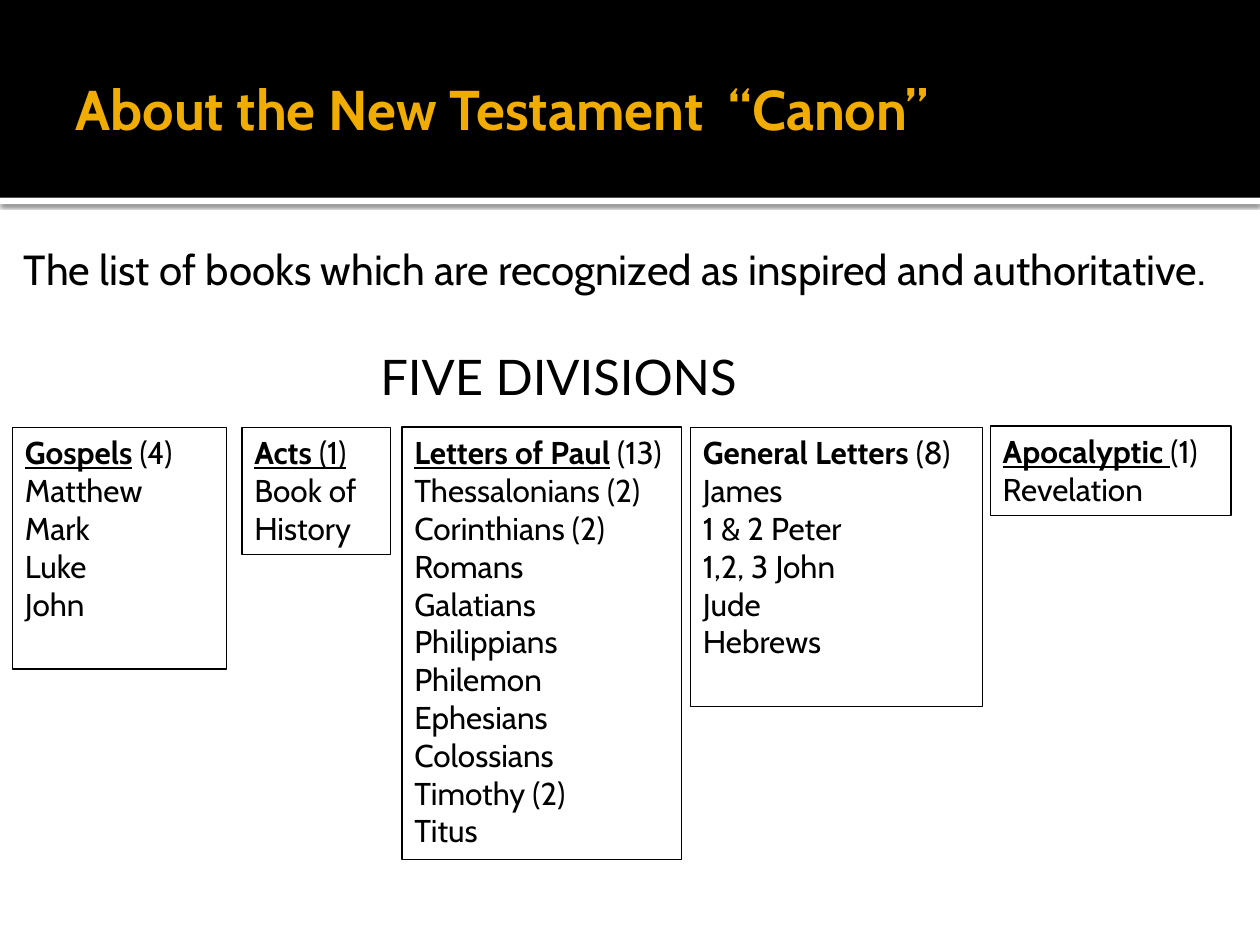
from dataclasses import dataclass

from lxml.etree import SubElement
from pptx import Presentation
from pptx.dml.color import RGBColor
from pptx.enum.shapes import MSO_SHAPE
from pptx.enum.text import MSO_ANCHOR, PP_ALIGN
from pptx.oxml.ns import qn
from pptx.util import Inches, Pt

WIDTH, HEIGHT = 10, 7.5
BAND = 1.57
BOX_TOP = 3.39
BLACK, WHITE, GOLD = "000000", "FFFFFF", "F0AD00"


@dataclass
class Division:
    left: float
    width: float
    height: float
    name: str
    count: str
    books: list[str]
    name_underline: bool = True
    count_underline: bool = False
    top: float = BOX_TOP
    wrap: bool = True


DIVISIONS = [
    Division(0.1, 1.7, 1.92, "Gospels", " (4)", ["Matthew", "Mark", "Luke", "John"]),
    Division(1.92, 1.18, 1.01, "Acts ", "(1)", ["Book of History"], count_underline=True),
    Division(3.19, 2.22, 3.43, "Letters of Paul", " (13)",
             ["Thessalonians (2)", "Corinthians (2)", "Romans", "Galatians", "Philippians",
              "Philemon", "Ephesians", "Colossians", "Timothy (2)", "Titus"], wrap=False),
    Division(5.48, 2.32, 2.22, "General Letters ", "(8)",
             ["James", "1 & 2 Peter", "1,2, 3 John", "Jude", "Hebrews"], name_underline=False),
    Division(7.86, 1.91, 0.71, "Apocalyptic ", "(1)", ["Revelation"], top=3.38),
]


def rgb(color: str) -> RGBColor:
    return RGBColor.from_string(color)


def add_run(p, text: str, size=18, font="Cabin", color=BLACK, bold=False, underline=False):
    r = p.add_run()
    r.text = text
    r.font.size, r.font.name = Pt(size), font
    r.font.bold, r.font.underline = bold, underline
    r.font.color.rgb = rgb(color)


def set_insets(tf, left: float, top: float, right: float, bottom: float):
    tf.margin_left, tf.margin_top = Inches(left), Inches(top)
    tf.margin_right, tf.margin_bottom = Inches(right), Inches(bottom)


def add_text_box(s, left: float, top: float, width: float, height: float, wrap=True):
    sp = s.shapes.add_textbox(Inches(left), Inches(top), Inches(width), Inches(height))
    sp.text_frame.word_wrap = wrap
    return sp


def add_band(s, top: float, height: float, color: str):
    sp = s.shapes.add_shape(MSO_SHAPE.RECTANGLE, 0, Inches(top), Inches(WIDTH), Inches(height))
    sp.shadow.inherit = False
    sp.fill.solid()
    sp.fill.fore_color.rgb = rgb(color)
    sp.line.fill.background()
    return sp


def add_shadow(sp, color: str, blur: float, distance: float, opacity: int):
    effects = sp._element.spPr.find(qn("a:effectLst"))
    shadow = SubElement(effects, qn("a:outerShdw"), blurRad=str(Pt(blur)), dist=str(Pt(distance)),
                        dir="5400000", algn="tl", rotWithShape="0")
    clr = SubElement(shadow, qn("a:srgbClr"), val=color)
    SubElement(clr, qn("a:alpha"), val=str(opacity * 1000))


def add_title(s, text: str):
    sp = s.shapes.title
    sp.left, sp.top, sp.width, sp.height = (Inches(v) for v in (0.5, 0.17, 9, 1.37))
    tf = sp.text_frame
    tf.vertical_anchor = MSO_ANCHOR.MIDDLE
    set_insets(tf, 0.1, 0.05, 0.05, 0.05)
    p = tf.paragraphs[0]
    p.alignment = PP_ALIGN.LEFT
    add_run(p, text, size=32, color=GOLD, bold=True)
    s.shapes._spTree.append(sp._element)  # in front of the header band


def add_division(s, d: Division):
    sp = add_text_box(s, d.left, d.top, d.width, d.height, d.wrap)
    sp.line.color.rgb = rgb(BLACK)
    sp.line.width = Pt(0.75)
    tf = sp.text_frame
    p = tf.paragraphs[0]
    add_run(p, d.name, bold=True, underline=d.name_underline)
    add_run(p, d.count, underline=d.count_underline)
    for book in d.books:
        add_run(tf.add_paragraph(), book)


def main():
    prs = Presentation()
    prs.slide_width, prs.slide_height = Inches(WIDTH), Inches(HEIGHT)
    s = prs.slides.add_slide(prs.slide_layouts[5])

    rule = add_band(s, BAND, 0.05, WHITE)
    add_shadow(rule, BLACK, blur=2.5, distance=0.8, opacity=60)
    add_band(s, 0, BAND, BLACK)
    add_title(s, "About the New Testament  “Canon”")

    tf = add_text_box(s, 0, 1.83, WIDTH, 5.58).text_frame
    set_insets(tf, 0.19, 0.1, 0.1, 0.05)
    add_run(tf.paragraphs[0],
            "The list of books which are recognized as inspired and authoritative.", size=24)

    for d in DIVISIONS:
        add_division(s, d)

    tf = add_text_box(s, 2.92, 2.7, 3.09, 0.57, wrap=False).text_frame
    add_run(tf.paragraphs[0], "FIVE DIVISIONS", size=28, font="Lato")
    prs.save("out.pptx")


if __name__ == "__main__":
    main()
